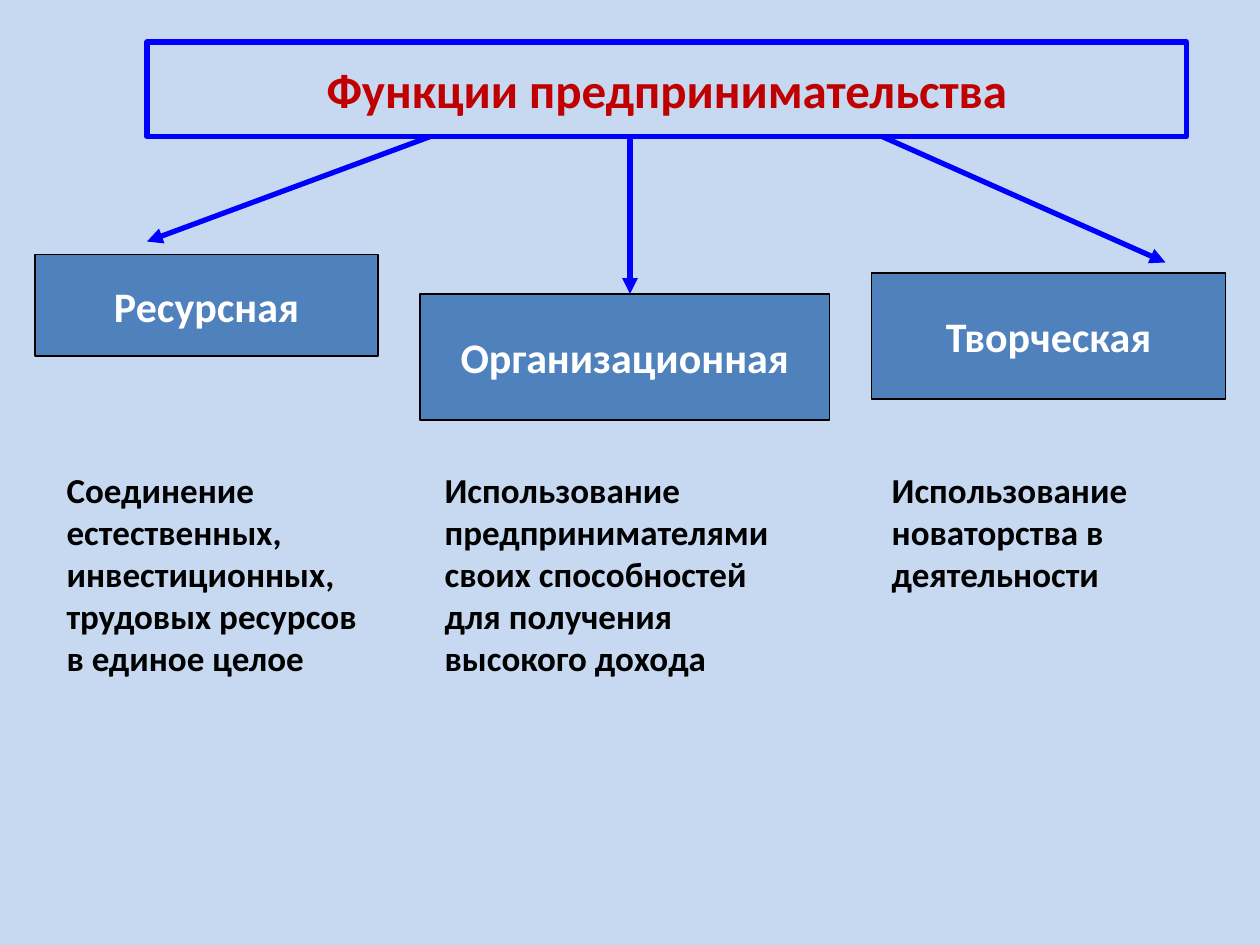
import pptx
import pptx.dml.color
import pptx.enum.shapes
import pptx.enum.text
import pptx.oxml.ns
import pptx.util
from lxml import etree

Pt = pptx.util.Pt
ALIGN = pptx.enum.text.PP_ALIGN
ANCHOR = pptx.enum.text.MSO_ANCHOR
COLORS = {"back": "C6D9F1", "frame": "0000FF", "title": "C00000",
          "box": "4F81BD", "label": "FFFFFF", "text": "000000"}


class SlideBuilder:
    font = "Calibri"
    frame_width = 3
    box_width = 0.75

    def __init__(self, prs):
        self.s = prs.slides.add_slide(prs.slide_layouts[5])
        self.fill(self.s.background.fill, "back")

    def color(self, name):
        return pptx.dml.color.RGBColor.from_string(COLORS[name])

    def fill(self, fill, name):
        fill.solid()
        fill.fore_color.rgb = self.color(name)

    def outline(self, sp, name, width):
        sp.line.color.rgb = self.color(name)
        sp.line.width = Pt(width)

    def add_text(self, sp, lines, size, color, align, anchor, wrap=True):
        tf = sp.text_frame
        tf.word_wrap = wrap
        tf.vertical_anchor = anchor
        for i, line in enumerate(lines):
            p = tf.add_paragraph() if i else tf.paragraphs[0]
            p.alignment = align
            r = p.add_run()
            r.text = line
            for key, value in {"name": self.font, "size": Pt(size), "bold": True}.items():
                setattr(r.font, key, value)
            r.font.color.rgb = self.color(color)

    def title(self, text, left, top, width, height):
        sp = self.s.shapes.title
        place = {"left": left, "top": top, "width": width, "height": height}
        for key, value in place.items():
            setattr(sp, key, Pt(value))
        self.outline(sp, "frame", self.frame_width)
        self.add_text(sp, [text], 28, "title", ALIGN.CENTER, ANCHOR.MIDDLE)

    def arrow(self, *ends):
        sp = self.s.shapes.add_connector(
            pptx.enum.shapes.MSO_CONNECTOR.STRAIGHT, *map(Pt, ends))
        self.outline(sp, "frame", self.frame_width)
        qn = pptx.oxml.ns.qn
        sp_pr = sp._element.spPr
        etree.SubElement(sp_pr.find(qn("a:ln")), qn("a:tailEnd"), type="triangle")
        etree.SubElement(sp_pr, qn("a:effectLst"))

    def box(self, text, *place):
        sp = self.s.shapes.add_shape(
            pptx.enum.shapes.MSO_SHAPE.RECTANGLE, *map(Pt, place))
        sp.shadow.inherit = False
        self.fill(sp.fill, "box")
        self.outline(sp, "text", self.box_width)
        self.add_text(sp, [text], 24, "label", ALIGN.CENTER, ANCHOR.MIDDLE, wrap=False)

    def note(self, lines, *place, wrap=True):
        sp = self.s.shapes.add_textbox(*map(Pt, place))
        self.add_text(sp, lines, 20, "text", ALIGN.LEFT, ANCHOR.TOP, wrap)
        sp.text_frame.auto_size = pptx.enum.text.MSO_AUTO_SIZE.SHAPE_TO_FIT_TEXT


def main():
    prs = pptx.Presentation()
    prs.slide_width, prs.slide_height = Pt(720), Pt(540)
    slide = SlideBuilder(prs)

    # Heading
    title_bottom = 78
    slide.title("Функции предпринимательства", 84, 24, 594, title_bottom - 24)

    # Arrows from the heading to each function
    for start_x, end_x, end_y in ((246, 84, 138), (360, 360, 168), (504, 666, 150)):
        slide.arrow(start_x, title_bottom, end_x, end_y)

    # Functions
    slide.box("Ресурсная", 20, 145.5, 196, 58)
    slide.box("Организационная", 240, 168, 234, 72)
    slide.box("Творческая", 498, 156, 202.5, 72)

    # Explanations
    note_top = 264
    slide.note(["Соединение", "естественных,", "инвестиционных,",
                "трудовых ресурсов", "в единое целое"], 31, note_top, 196, 127.5)
    slide.note(["Использование", "предпринимателями", "своих способностей",
                "для получения", "высокого дохода"], 247, note_top, 218, 127.5)
    slide.note(["Использование", "новаторства в", "деятельности"],
               502.5, note_top, 175, 79, wrap=False)

    prs.save("out.pptx")


if __name__ == "__main__":
    main()
